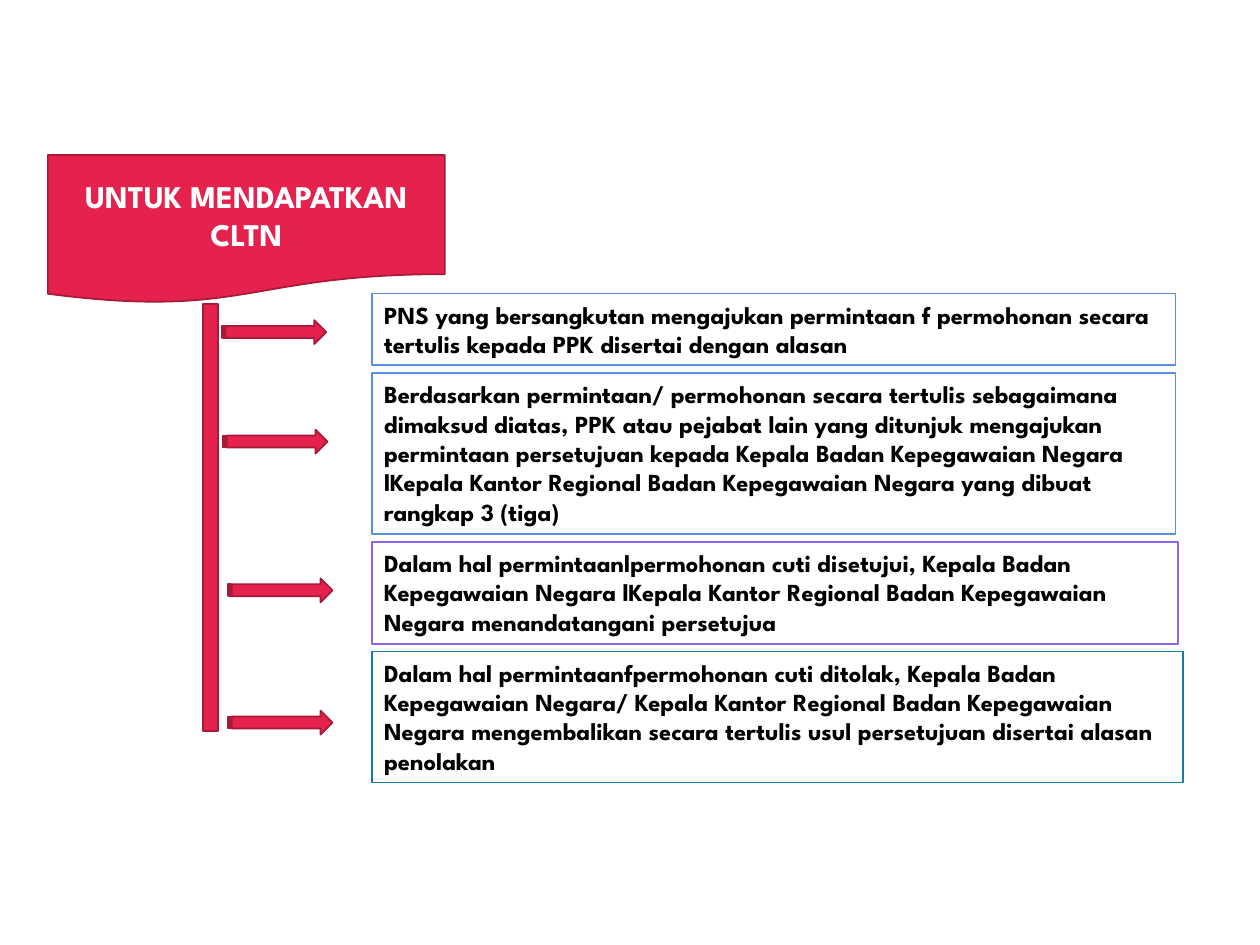
from pptx import Presentation
from pptx.dml.color import RGBColor
from pptx.enum.shapes import MSO_SHAPE
from pptx.enum.text import MSO_ANCHOR, MSO_AUTO_SIZE, PP_ALIGN
from pptx.util import Inches, Pt

FONT = "League Spartan"
COLORS = {
    "red": "E5224E", "dark_red": "A9193A", "white": "FFFFFF", "black": "000000",
    "blue": "588FE2", "purple": "8D65EA", "teal": "127CA4",
}

# Each step: box top, width, height, border, arrow left, arrow top, text
STEPS = [
    (2.33, 6.38, 0.57, "blue", 1.76, 2.54,
     "PNS yang bersangkutan mengajukan permintaan f permohonan secara tertulis "
     "kepada PPK disertai dengan alasan"),
    (2.96, 6.38, 1.28, "blue", 1.77, 3.41,
     "Berdasarkan permintaan/ permohonan secara tertulis sebagaimana dimaksud "
     "diatas, PPK atau pejabat lain yang ditunjuk mengajukan permintaan "
     "persetujuan kepada Kepala Badan Kepegawaian Negara lKepala Kantor Regional "
     "Badan Kepegawaian Negara yang dibuat rangkap 3 (tiga)"),
    (4.3, 6.4, 0.81, "purple", 1.81, 4.59,
     "Dalam hal permintaanlpermohonan cuti disetujui, Kepala Badan Kepegawaian "
     "Negara lKepala Kantor Regional Badan Kepegawaian Negara menandatangani "
     "persetujua"),
    (5.17, 6.44, 1.04, "teal", 1.81, 5.64,
     "Dalam hal permintaanfpermohonan cuti ditolak, Kepala Badan Kepegawaian "
     "Negara/ Kepala Kantor Regional Badan Kepegawaian Negara mengembalikan "
     "secara tertulis usul persetujuan disertai alasan penolakan"),
]


def rgb(name):
    return RGBColor.from_string(COLORS[name])


def add_box(s, kind, box, fill="red", line="dark_red"):
    sp = s.shapes.add_shape(kind, *(Inches(v) for v in box))
    sp.shadow.inherit = False
    sp.fill.solid()
    sp.fill.fore_color.rgb = rgb(fill)
    sp.line.color.rgb = rgb(line)
    sp.line.width = Pt(1)
    return sp


def set_text(sp, text, size=14, color="black", align=PP_ALIGN.LEFT,
             anchor=MSO_ANCHOR.TOP, auto_size=MSO_AUTO_SIZE.NONE):
    tf = sp.text_frame
    tf.word_wrap = True
    tf.auto_size = auto_size
    tf.vertical_anchor = anchor
    p = tf.paragraphs[0]
    p.alignment = align
    r = p.add_run()
    r.text = text
    r.font.name = FONT
    r.font.size = Pt(size)
    r.font.bold = True
    r.font.color.rgb = rgb(color)


def add_heading(s, box):
    sp = add_box(s, MSO_SHAPE.FLOWCHART_DOCUMENT, box)
    set_text(sp, "UNTUK MENDAPATKAN CLTN", size=18, color="white",
             align=PP_ALIGN.CENTER, anchor=MSO_ANCHOR.MIDDLE)


def add_step(s, box, border, text):
    sp = add_box(s, MSO_SHAPE.RECTANGLE, box, fill="white", line=border)
    set_text(sp, text, auto_size=MSO_AUTO_SIZE.SHAPE_TO_FIT_TEXT)


def main():
    prs = Presentation()
    prs.slide_width, prs.slide_height = Inches(10), Inches(7.5)
    s = prs.slides.add_slide(prs.slide_layouts[6])

    # Heading banner
    add_heading(s, (0.38, 1.23, 3.15, 1.18))

    # Step boxes
    for top, width, height, border, _, _, text in STEPS:
        add_step(s, (2.95, top, width, height), border, text)

    # Trunk with an arrow to each step
    add_box(s, MSO_SHAPE.RECTANGLE, (1.61, 2.41, 0.12, 3.39))
    for _, _, _, _, left, top, _ in STEPS:
        add_box(s, MSO_SHAPE.STRIPED_RIGHT_ARROW, (left, top, 0.83, 0.19))

    prs.save("out.pptx")


if __name__ == "__main__":
    main()
